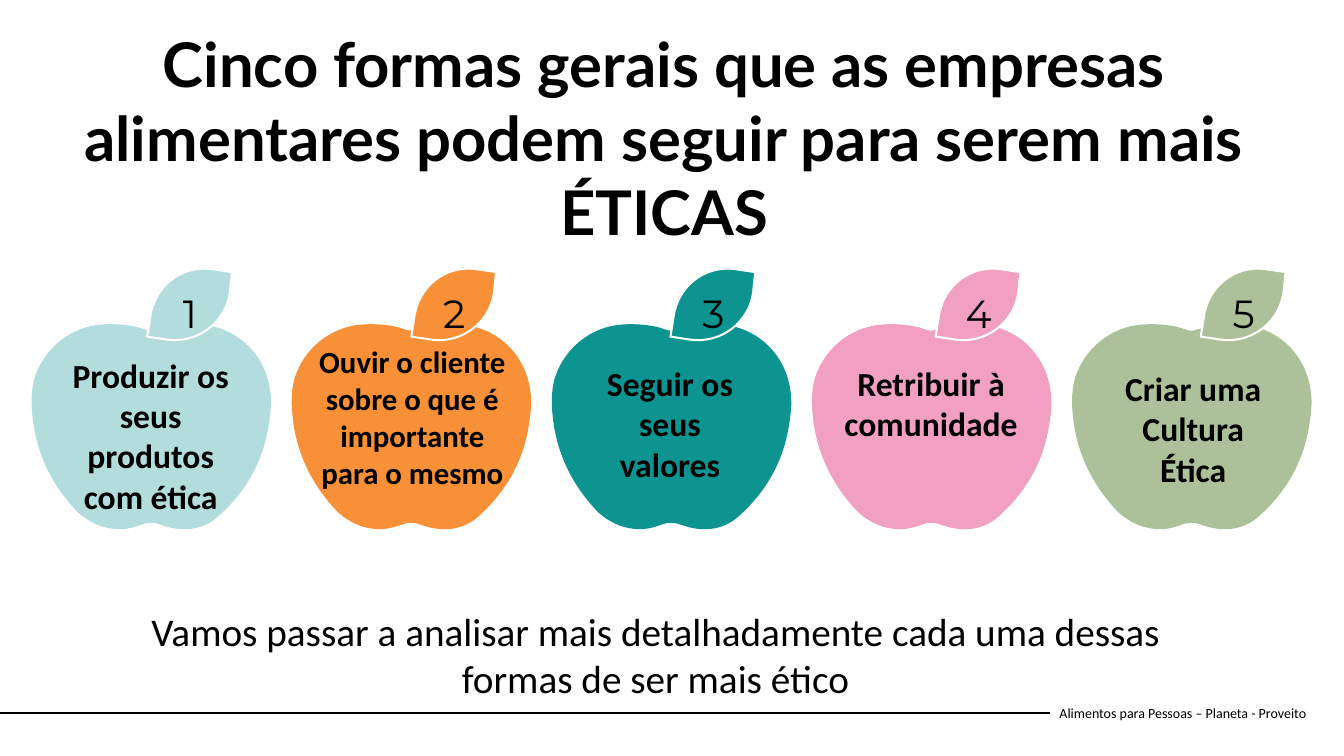
"""Build the slide on five general ways food companies can be more ethical."""
from pptx import Presentation
from pptx.dml.color import RGBColor
from pptx.enum.shapes import MSO_CONNECTOR
from pptx.enum.text import MSO_ANCHOR, PP_ALIGN
from pptx.oxml.ns import qn
from pptx.util import Inches, Pt
from lxml.etree import SubElement

BLACK = RGBColor(0x00, 0x00, 0x00)
WHITE = RGBColor(0xFF, 0xFF, 0xFF)
AQUA = RGBColor(0xB2, 0xDD, 0xDC)
ORANGE = RGBColor(0xF7, 0x90, 0x37)
TEAL = RGBColor(0x0D, 0x93, 0x90)
PINK = RGBColor(0xF1, 0xA0, 0xC2)
SAGE = RGBColor(0xAC, 0xC1, 0x99)

APPLE_LEFT, APPLE_PITCH = 0.3, 2.58
APPLE_TOP, LEAF_TOP = 3.2, 2.63
APPLE = [
    (2.38, 0.68),
    (2.34, 0.37, 2.13, 0.12, 1.82, 0.04),
    (1.67, 0, 1.52, 0.01, 1.37, 0.04),
    (1.29, 0.06),
    (1.26, 0.07, 1.22, 0.08, 1.2, 0.08),
    (1.18, 0.08, 1.16, 0.08, 1.14, 0.07),
    (1.08, 0.05),
    (0.97, 0.02, 0.82, 0.01, 0.71, 0.02),
    (0.4, 0.04, 0.13, 0.26, 0.04, 0.56),
    (0, 0.71, 0.01, 0.85, 0.03, 1),
    (0.08, 1.34, 0.23, 1.63, 0.47, 1.88),
    (0.59, 1.99, 0.73, 2.05, 0.89, 2.05),
    (0.98, 2.05, 1.06, 2.02, 1.15, 1.99),
    (1.18, 1.99, 1.21, 1.98, 1.24, 1.99),
    (1.37, 2.03),
    (1.57, 2.08, 1.75, 2.04, 1.89, 1.9),
    (2.14, 1.67, 2.3, 1.39, 2.36, 1.05),
    (2.38, 0.93, 2.4, 0.8, 2.38, 0.68),
]
LEAF = [
    (0.2, 0.74),
    (0, 0.71),
    (0.03, 0.52),
    (0.07, 0.21, 0.34, 0, 0.64, 0.04),
    (0.84, 0.07),
    (0.82, 0.27),
    (0.78, 0.57, 0.5, 0.78, 0.2, 0.74),
]
WAYS = [
    (AQUA, 1.46, "Produzir os seus produtos com ética", 24, (0.61, 3.47, 1.77, 1.72)),
    (ORANGE, 4.08, "Ouvir o cliente sobre o que é importante para o mesmo", 22,
     (2.96, 3.35, 2.26, 1.58)),
    (TEAL, 6.65, "Seguir os seus valores", 24, (5.76, 3.55, 1.77, 1.31)),
    (PINK, 9.28, "Retribuir à comunidade", 24, (8.25, 3.55, 1.97, 0.91)),
    (SAGE, 11.91, "Criar uma Cultura Ética", 24, (10.95, 3.6, 1.77, 1.31)),
]


def add_outline(outline, left, top, color):
    """Draw a filled outline whose six-number entries are Bézier curves."""
    anchors = [(Inches(left + entry[-2]), Inches(top + entry[-1])) for entry in outline]
    builder = page.shapes.build_freeform(*anchors[0], scale=1.0)
    builder.add_line_segments(anchors[1:], close=True)
    shape = builder.convert_to_shape()
    segments = list(shape._element.iter(qn("a:lnTo")))
    for segment, entry in zip(segments, outline[1:]):
        if len(entry) == 2:
            continue
        segment.tag = qn("a:cubicBezTo")
        segment.remove(segment[0])
        for x, y in zip(entry[::2], entry[1::2]):
            SubElement(segment, qn("a:pt"), x=str(Inches(left + x) - shape.left),
                       y=str(Inches(top + y) - shape.top))
    shape.shadow.inherit = False
    shape.fill.solid()
    shape.fill.fore_color.rgb = color
    shape.line.fill.background()
    return shape


def write_text(box, place, text, font, size, bold=False, align=PP_ALIGN.CENTER):
    """Place a text shape and write its single run."""
    box.left, box.top, box.width, box.height = [Inches(value) for value in place]
    box.text_frame.word_wrap = True
    box.text_frame.vertical_anchor = MSO_ANCHOR.TOP
    para = box.text_frame.paragraphs[0]
    para.alignment = align
    span = para.add_run()
    span.text = text
    span.font.name = font
    span.font.size = Pt(size)
    span.font.bold = bold
    span.font.color.rgb = BLACK


deck = Presentation()
deck.slide_width, deck.slide_height = Inches(13.33), Inches(7.5)
page = deck.slides.add_slide(deck.slide_layouts[5])

write_text(page.shapes.title, (0.15, 0.21, 12.88, 2.32),
           "Cinco formas gerais que as empresas alimentares podem seguir "
           "para serem mais ÉTICAS", "Lato", 44, bold=True)

footer = page.shapes.add_textbox(0, 0, 0, 0)
write_text(footer, (10.41, 6.87, 2.73, 0.4),
           "Alimentos para Pessoas – Planeta - Proveito", "Calibri", 10,
           align=PP_ALIGN.LEFT)
footer.text_frame.vertical_anchor = MSO_ANCHOR.MIDDLE

rule = page.shapes.add_connector(
    MSO_CONNECTOR.STRAIGHT, 0, Inches(7.07), Inches(10.41), Inches(7.07))
rule.end_connect(footer, 1)
rule.line.color.rgb = BLACK
rule.line.width = Pt(1.5)
SubElement(rule._element.spPr, qn("a:effectLst"))

for index, (color, leaf_left, caption, size, caption_place) in enumerate(WAYS):
    apple = add_outline(APPLE, APPLE_LEFT + index * APPLE_PITCH, APPLE_TOP, color)
    apple.name = f"Apple {index + 1}"
    leaf = add_outline(LEAF, leaf_left, LEAF_TOP, color)
    leaf.name = f"Leaf {index + 1}"
    leaf.line.color.rgb = WHITE
    leaf.line.width = Pt(1.45)
    write_text(page.shapes.add_textbox(0, 0, 0, 0),
               (leaf_left + 0.05, 2.82, 0.75, 0.57), str(index + 1), "Montserrat", 28)
    write_text(page.shapes.add_textbox(0, 0, 0, 0),
               caption_place, caption, "Calibri", size, bold=True)

write_text(page.shapes.add_textbox(0, 0, 0, 0), (0.92, 5.98, 11.16, 1.04),
           "Vamos passar a analisar mais detalhadamente cada uma dessas formas "
           "de ser mais ético", "Calibri", 28)

deck.save("out.pptx")
